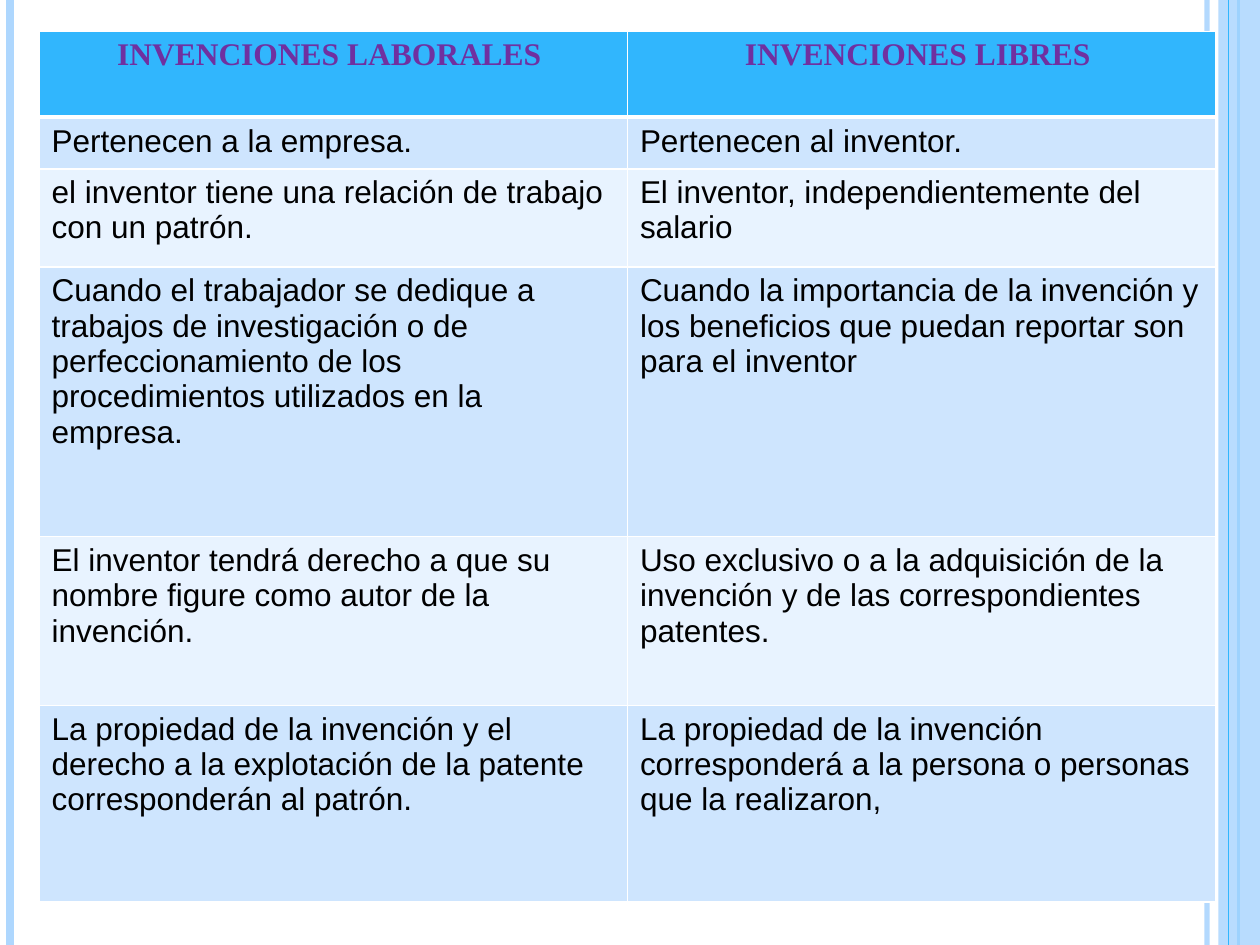
from lxml.etree import SubElement
from pptx import Presentation
from pptx.dml.color import RGBColor
from pptx.enum.shapes import MSO_CONNECTOR, MSO_SHAPE
from pptx.enum.text import PP_ALIGN
from pptx.oxml.ns import qn
from pptx.util import Inches, Pt

COLORS = {"header": "31B6FD", "stripe": "AED7FE", "band": "CEE5FE", "light": "E8F3FF",
          "border": "FFFFFF", "title": "7030A0", "text": "000000"}
ROWS = [
    (0.68, "INVENCIONES LABORALES ", "INVENCIONES LIBRES "),
    (0.41, "Pertenecen a la empresa.", "Pertenecen al inventor."),
    (0.78, "el inventor tiene una relación de trabajo con un patrón.",
     "El inventor, independientemente del salario"),
    (2.14, "Cuando el trabajador se dedique a trabajos de investigación o de "
     "perfeccionamiento de los procedimientos utilizados en la empresa.",
     "Cuando la importancia de la invención y los beneficios que puedan reportar "
     "son para el inventor"),
    (1.34, "El inventor tendrá derecho a que su nombre figure como autor de la invención.",
     "Uso exclusivo o a la adquisición de la invención y de las correspondientes patentes."),
    (1.56, "La propiedad de la invención y el derecho a la explotación de la patente "
     "corresponderán al patrón.",
     "La propiedad de la invención corresponderá a la persona o personas que la realizaron,"),
]


def rgb(name):
    return RGBColor.from_string(COLORS[name])


def write(tf, text, font="Arial", size=18, color="text", bold=False, align=PP_ALIGN.LEFT):
    p = tf.paragraphs[0]
    p.alignment = align
    r = p.add_run()
    r.text = text
    r.font.name, r.font.size, r.font.bold = font, Pt(size), bold
    r.font.color.rgb = rgb(color)


def set_alpha(fill_parent, percent):
    clr = next(fill_parent.iter(qn("a:srgbClr")))
    SubElement(clr, qn("a:alpha"), val=str(percent * 1000))


class SlideBuilder:
    """Draws styled elements on the current slide."""

    def __init__(self, prs):
        self.prs = prs
        self.s = prs.slides.add_slide(prs.slide_layouts[6])

    def vertical_line(self, x, color, width, alpha=100):
        ln = self.s.shapes.add_connector(
            MSO_CONNECTOR.STRAIGHT, Inches(x), 0, Inches(x), self.prs.slide_height)
        ln.line.color.rgb = rgb(color)
        ln.line.width = Pt(width)
        if alpha < 100:
            set_alpha(ln.line._get_or_add_ln(), alpha)
        SubElement(ln._element.spPr, qn("a:effectLst"))

    def side_band(self, x, width, color, alpha):
        sp = self.s.shapes.add_shape(
            MSO_SHAPE.RECTANGLE, Inches(x), 0, Inches(width), self.prs.slide_height)
        sp.shadow.inherit = False
        sp.fill.solid()
        sp.fill.fore_color.rgb = rgb(color)
        set_alpha(sp._element.spPr, alpha)
        sp.line.fill.background()

    def cell_borders(self, cell, top=1, bottom=1):
        tcPr = cell._tc.get_or_add_tcPr()
        for side, width in (("L", 1), ("R", 1), ("T", top), ("B", bottom)):
            ln = SubElement(tcPr, qn(f"a:ln{side}"), w=str(Pt(width)))
            fill = SubElement(ln, qn("a:solidFill"))
            SubElement(fill, qn("a:srgbClr"), val=COLORS["border"])

    def table(self, x, y, col_width, rows):
        height = sum(row[0] for row in rows)
        table = self.s.shapes.add_table(
            len(rows), 2, Inches(x), Inches(y), Inches(2 * col_width), Inches(height)).table
        for col in table.columns:
            col.width = Inches(col_width)
        for i, (row_height, *texts) in enumerate(rows):
            table.rows[i].height = Inches(row_height)
            for j, text in enumerate(texts):
                cell = table.cell(i, j)
                self.cell_borders(cell, 3 if i == 1 else 1, 3 if i == 0 else 1)
                cell.fill.solid()
                if i == 0:
                    cell.fill.fore_color.rgb = rgb("header")
                    write(cell.text_frame, text, font="Times New Roman", color="title",
                          bold=True, align=PP_ALIGN.CENTER)
                else:
                    cell.fill.fore_color.rgb = rgb("band" if i % 2 else "light")
                    write(cell.text_frame, text)


def main():
    prs = Presentation()
    prs.slide_width, prs.slide_height = Inches(10), Inches(7.5)
    b = SlideBuilder(prs)
    b.vertical_line(9.58, "stripe", 3, alpha=93)
    b.vertical_line(0.08, "stripe", 4.5)
    b.vertical_line(9.83, "header", 1.5)
    b.side_band(9.67, 0.33, "stripe", 87)
    b.vertical_line(9.75, "header", 0.75)
    b.table(0.31, 0.25, 4.67, ROWS)
    prs.save("out.pptx")


if __name__ == "__main__":
    main()
